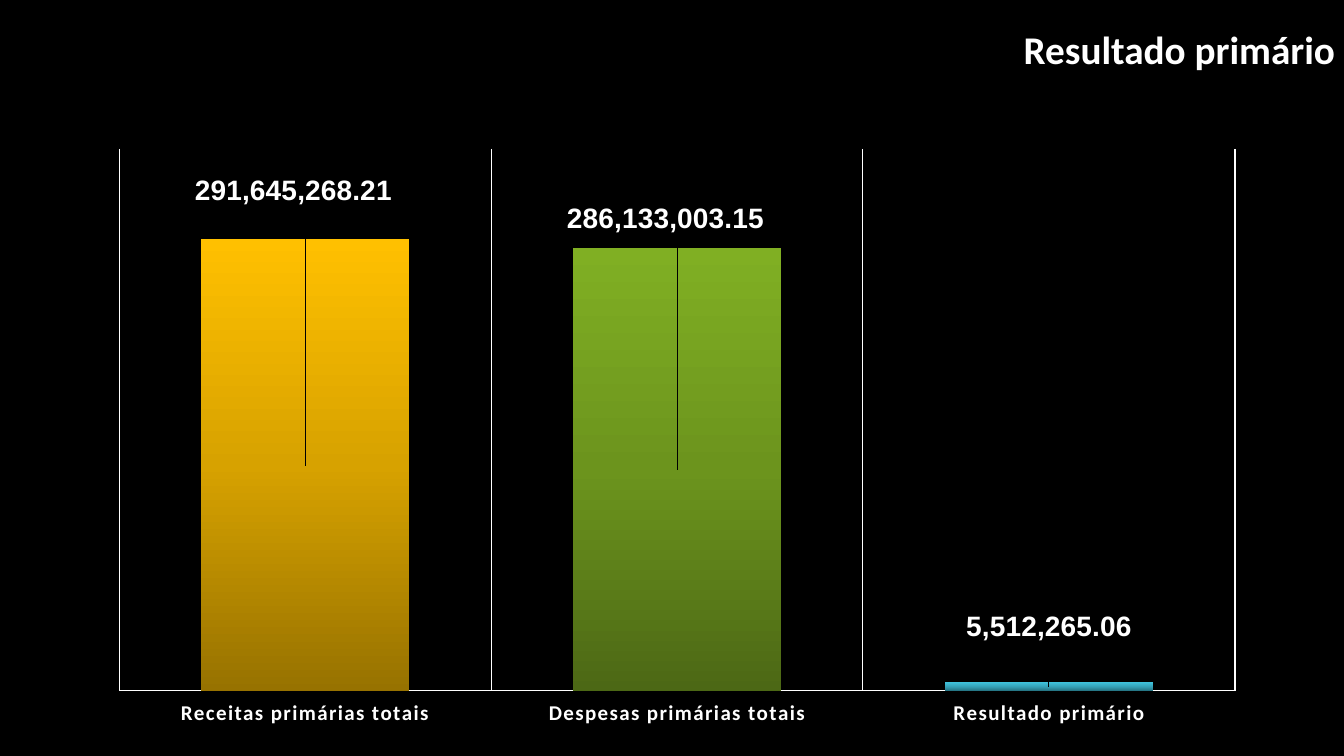
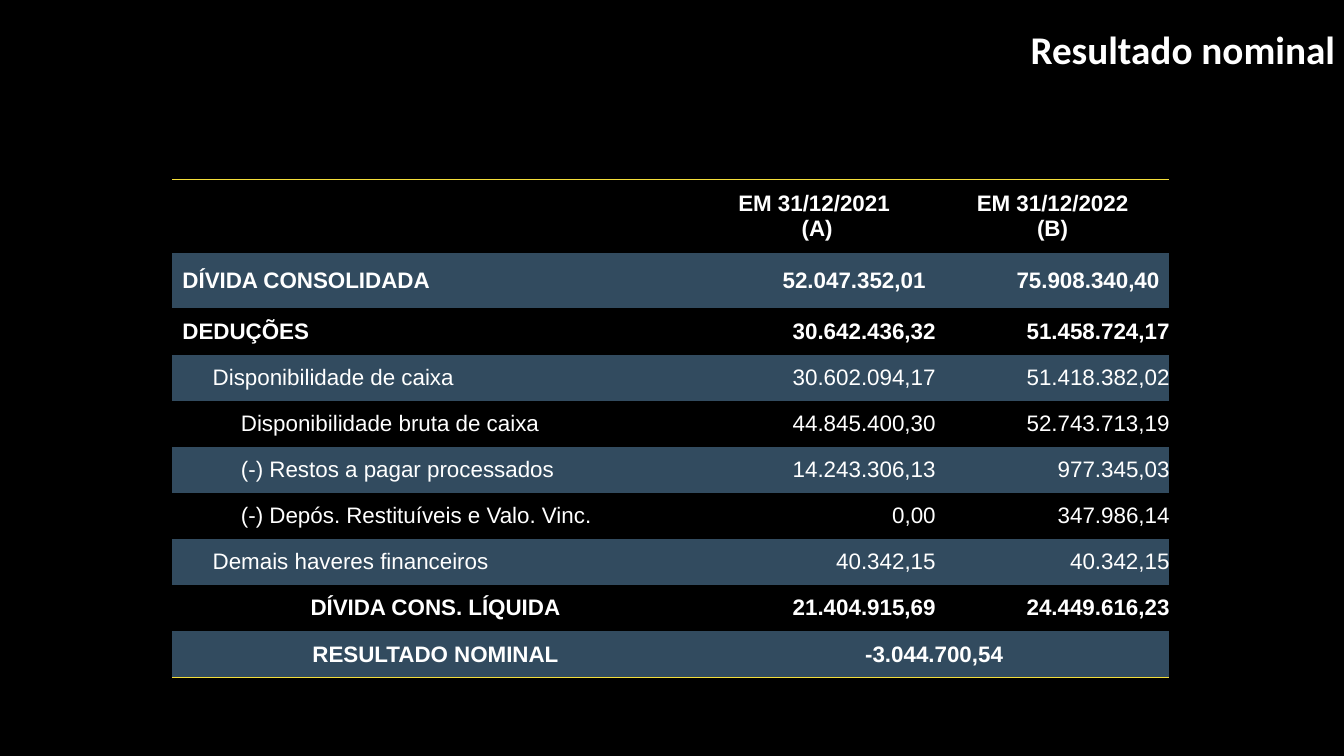
"""Builds the two slides on the primary and nominal fiscal results."""
from lxml.etree import SubElement
from pptx import Presentation
from pptx.chart.data import CategoryChartData
from pptx.dml.color import RGBColor
from pptx.enum.chart import XL_CHART_TYPE as ChartType, XL_TICK_LABEL_POSITION as TickLabels, XL_TICK_MARK as Tick
from pptx.enum.text import MSO_ANCHOR as Anchor, PP_ALIGN as Align
from pptx.oxml.ns import qn
from pptx.util import Inches, Pt

COLORS = {
    "background": "000000", "text": "FFFFFF", "band": "324B5F", "rule": "F4DE3A",
    "revenue": ("977200", "D7A200", "FFC000"),
    "expense": ("4C6815", "6C941D", "80AF23"),
    "result": ("257382", "35A3B9", "3FC2DB"),
}
NO_TABLE_STYLE = "{2D5ABB26-0587-4C30-8999-92F81FD0307C}"
NUMBER_FORMAT = "#,##0.00"
TITLE_ONLY = 5

PRIMARY_RESULT = [
    ("Receitas primárias totais", 291645268.21, "revenue", (-0.01, -0.46)),
    ("Despesas primárias totais", 286133003.15, "expense", (-0.01, -0.42)),
    ("Resultado primário", 5512265.06, "result", (0, -0.1)),
]
HEADERS = ["", "EM 31/12/2021 \n(A)", "EM 31/12/2022\n(B)"]
DEBT_ROWS = [
    ("DÍVIDA CONSOLIDADA", "52.047.352,01", "75.908.340,40", 0, True),
    ("DEDUÇÕES", "30.642.436,32", "51.458.724,17", 0.1, True),
    ("Disponibilidade de caixa", "30.602.094,17", "51.418.382,02", 0.4, False),
    ("Disponibilidade bruta de caixa", "44.845.400,30", "52.743.713,19", 0.68, False),
    ("(-) Restos a pagar processados", "14.243.306,13", "977.345,03", 0.68, False),
    ("(-) Depós. Restituíveis e Valo. Vinc.", "0,00", "347.986,14", 0.68, False),
    ("Demais haveres financeiros", "40.342,15", "40.342,15", 0.4, False),
    ("DÍVIDA CONS. LÍQUIDA", "21.404.915,69", "24.449.616,23", None, True),
    ("RESULTADO NOMINAL", "-3.044.700,54", "", None, True),
]


def rgb(name):
    return RGBColor.from_string(COLORS[name])


def set_font(font, size, name="Calibri", bold=True):
    font.size, font.name, font.bold = Pt(size), name, bold
    font.color.rgb = rgb("text")


def manual_layout(parent, position, **settings):
    layout = parent.makeelement(qn("c:layout"))
    parent.insert(position, layout)
    manual = SubElement(layout, qn("c:manualLayout"))
    for tag, value in settings.items():
        SubElement(manual, qn(f"c:{tag}")).set("val", str(value))


class Deck:
    """Holds the shared style and the current slide."""

    def __init__(self):
        self.prs = Presentation()
        self.prs.slide_width, self.prs.slide_height = Inches(13.33), Inches(7.5)
        backdrop = self.prs.slide_master.background.fill
        backdrop.solid()
        backdrop.fore_color.rgb = rgb("background")

    def add_slide(self, heading):
        self.slide = self.prs.slides.add_slide(self.prs.slide_layouts[TITLE_ONLY])
        title = self.slide.shapes.title
        title.left, title.top = Inches(4.91), Inches(0.2)
        title.width, title.height = Inches(8.43), Inches(0.57)
        title.text_frame.text = heading
        title.text_frame.vertical_anchor = Anchor.TOP
        paragraph = title.text_frame.paragraphs[0]
        paragraph.alignment = Align.RIGHT
        set_font(paragraph.font, 28)

    def add_columns(self, bars):
        data = CategoryChartData(number_format=NUMBER_FORMAT)
        data.categories = [bar[0] for bar in bars]
        data.add_series("Series 1", [bar[1] for bar in bars])
        chart = self.slide.shapes.add_chart(
            ChartType.COLUMN_STACKED, Inches(0.95), Inches(1.36), Inches(11.53), Inches(5.91), data).chart
        chart.has_legend = chart.has_title = False
        set_font(chart.font, 10, bold=False)
        plot = chart.plots[0]
        plot.gap_width, plot.overlap, plot.vary_by_categories = 79, 100, False
        self.style_axes(chart)
        series = plot.series[0]
        for index, (_, _, shades, offset) in enumerate(bars):
            point = series.points[index]
            self.fill_gradient(point.format.fill, COLORS[shades], point.format)
            set_font(point.data_label.font, 20, "Arial")
        labels = series.data_labels
        labels.number_format, labels.number_format_is_linked = NUMBER_FORMAT, False
        labels.show_value = True
        set_font(labels.font, 20, "Arial")
        for label, bar in zip(series._element.iter(qn("c:dLbl")), bars):
            manual_layout(label, 1, x=bar[3][0], y=bar[3][1])
        plot_area = plot._element.getparent()
        for automatic in plot_area.findall(qn("c:layout")):
            plot_area.remove(automatic)
        manual_layout(plot_area, 0, layoutTarget="inner", xMode="edge", yMode="edge",
                      x=0.02, y=0.02, w=0.96, h=0.91)

    def style_axes(self, chart):
        values, categories = chart.value_axis, chart.category_axis
        values.visible = values.has_major_gridlines = False
        values.minimum_scale, values.maximum_scale = 0, 350000000
        categories.has_major_gridlines = True
        categories.major_tick_mark = categories.minor_tick_mark = Tick.NONE
        categories.tick_label_position = TickLabels.LOW
        for line in (categories.format.line, categories.major_gridlines.format.line):
            line.width = Pt(0.75)
            line.color.rgb = rgb("text")
        set_font(categories.tick_labels.font, 15)
        for properties in categories._element.iter(qn("a:defRPr")):
            properties.set("spc", "100")

    def fill_gradient(self, fill, shades, bar_format):
        fill.gradient()
        fill.gradient_angle = 90
        stops = fill.gradient_stops[0]._gs.getparent()
        for stop in list(stops):
            stops.remove(stop)
        for position, shade in zip((0, 50000, 100000), shades):
            stop = SubElement(stops, qn("a:gs"), pos=str(position))
            SubElement(stop, qn("a:srgbClr"), val=shade)
        bar_format.line.fill.background()

    def add_debt_table(self, headers, rows):
        widths, height = (5.22, 2.35, 2.32), 4.94
        top_heights = [0.73, 0.55]
        row_height = (height - sum(top_heights)) / (len(rows) - 1)
        heights = top_heights + [row_height] * (len(rows) - 1)
        frame = self.slide.shapes.add_table(
            len(heights), len(widths), Inches(1.71), Inches(1.78), Inches(sum(widths)), Inches(height))
        table = frame.table
        table.first_row = table.horz_banding = False
        next(frame._element.iter(qn("a:tableStyleId"))).text = NO_TABLE_STYLE
        for column, width in zip(table.columns, widths):
            column.width = Inches(width)
        for row, height in zip(table.rows, heights):
            row.height = Inches(height)
        last = len(rows)
        table.cell(last, 1).merge(table.cell(last, 2))
        for column, header in enumerate(headers):
            self.fill_cell(table.cell(0, column), header, Align.CENTER, padded=True)
            self.add_rule(table.cell(0, column), "a:lnT")
        for number, (*texts, indent, bold) in enumerate(rows, 1):
            for column, text in enumerate(texts):
                centered = indent is None and (column == 0 or number == last)
                align = Align.CENTER if centered else Align.RIGHT if column else Align.LEFT
                self.fill_cell(table.cell(number, column), text, align, bold, number == 1,
                               number % 2 == 1, 0 if column else indent)
        for column in range(len(widths)):
            self.add_rule(table.cell(last, column), "a:lnB")

    def fill_cell(self, cell, text, align, bold=True, padded=False, banded=False, indent=0):
        cell.vertical_anchor = Anchor.MIDDLE
        cell.margin_left = cell.margin_right = Inches(0.1 if padded else 0)
        cell.margin_top = cell.margin_bottom = Inches(0.05 if padded else 0)
        if banded:
            cell.fill.solid()
            cell.fill.fore_color.rgb = rgb("band")
        else:
            cell.fill.background()
        cell.text = text
        for paragraph in cell.text_frame.paragraphs:
            paragraph.alignment = align
            if indent:
                paragraph._p.get_or_add_pPr().set("marL", str(Inches(indent)))
            set_font(paragraph.font, 16, "Arial", bold)

    def add_rule(self, cell, side):
        properties = cell._tc.get_or_add_tcPr()
        rule = properties.makeelement(qn(side), {"w": str(Pt(1))})
        properties.insert(0, rule)
        SubElement(SubElement(rule, qn("a:solidFill")), qn("a:srgbClr"), val=COLORS["rule"])


def main():
    deck = Deck()
    deck.add_slide("Resultado primário")
    deck.add_columns(PRIMARY_RESULT)
    deck.add_slide("Resultado nominal")
    deck.add_debt_table(HEADERS, DEBT_ROWS)
    deck.prs.save("out.pptx")


if __name__ == "__main__":
    main()
